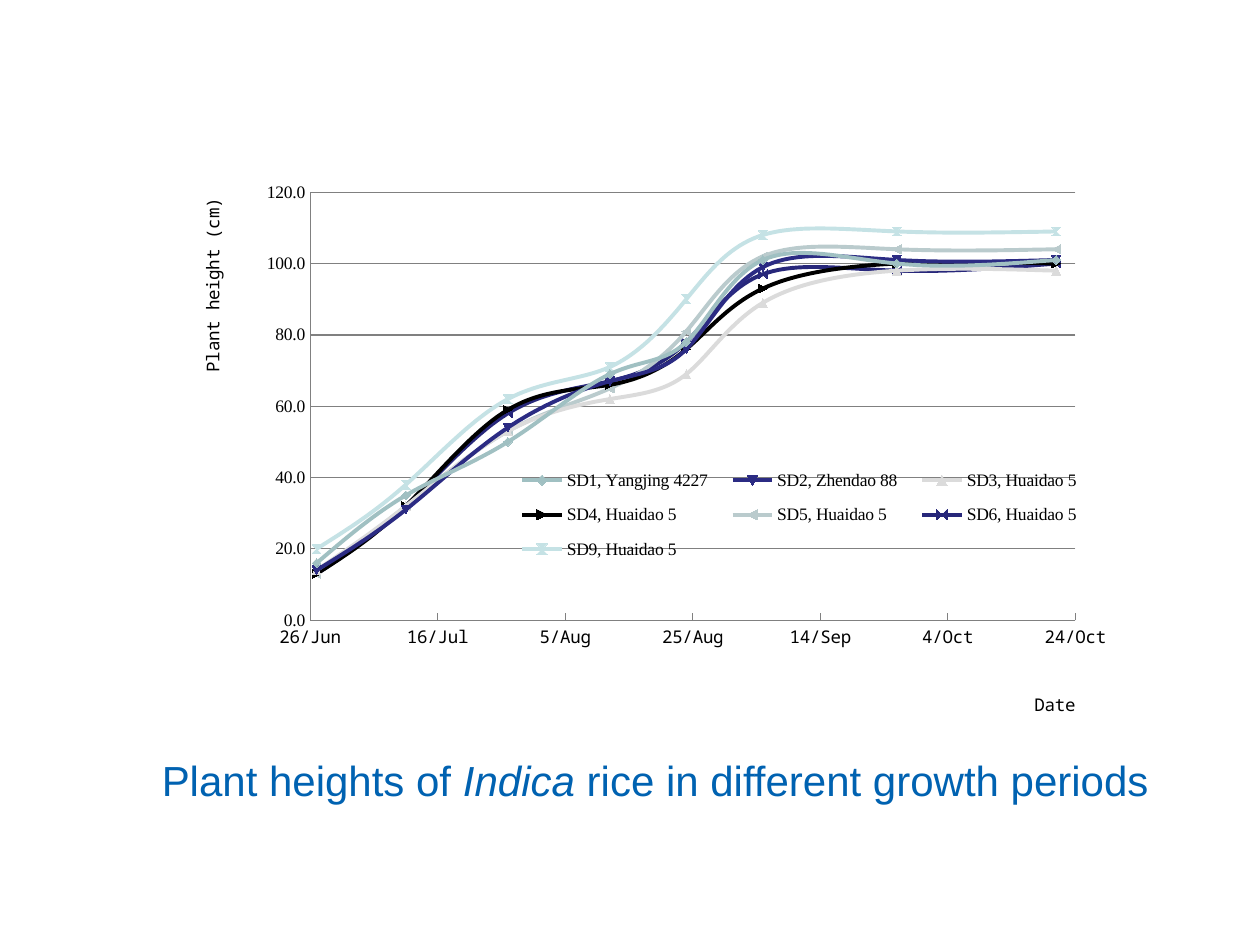
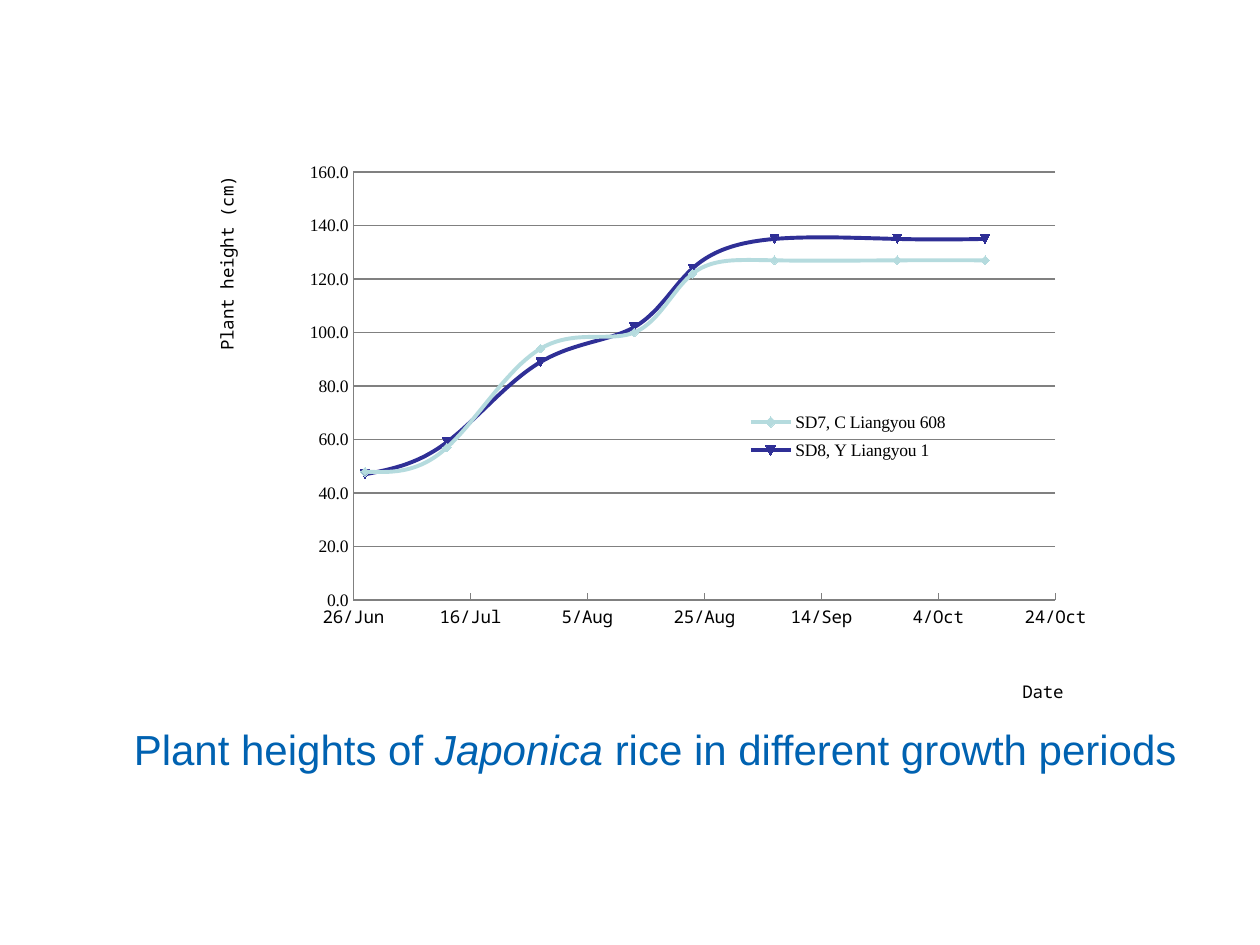
from lxml.etree import SubElement
from pptx import Presentation
from pptx.chart.data import XyChartData
from pptx.dml.color import RGBColor
from pptx.enum.chart import XL_CHART_TYPE as ChartType
from pptx.enum.chart import XL_LEGEND_POSITION as LegendPosition
from pptx.enum.chart import XL_TICK_MARK as TickMark
from pptx.enum.text import MSO_ANCHOR, PP_ALIGN
from pptx.oxml.ns import qn
from pptx.util import Inches, Pt

TITLE_BLUE, BLACK, GRID_GRAY = "0062B1", "000000", "808080"
SANS, SERIF, MONO = "Arial", "Times New Roman", "Noto Sans Mono"
FIRST_DAY, LAST_DAY = 40720, 40840  # 26 June and 24 October as date serials

# Boxes are left, top, width, height; those inside a chart are fractions of it.
SLIDES = [
    {
        "rice": "Indica",
        "title_box": (0.7, 5.78, 9, 0.81),
        "chart_box": (0.94, 1.25, 7.97, 4.68),
        "plot_box": (0.191, 0.059, 0.762, 0.726),
        "legend_box": (0.383, 0.506, 0.59, 0.2),
        "date_place": (0.909, 0.9),
        "height_place": (0.077, 0.064),
        "highest": 120,
        "days": (1, 15, 31, 47, 59, 71, 92, 117),
        "series": [
            ("SD1, Yangjing 4227", "A0C0C2", (16, 35, 50, 69, 78, 101, 100, 101)),
            ("SD2, Zhendao 88", "2B2B83", (14, 31, 54, 67, 76, 99, 101, 101)),
            ("SD3, Huaidao 5", "DBDBDB", (14, 32, 53, 62, 69, 89, 98, 98)),
            ("SD4, Huaidao 5", "000000", (13, 32, 59, 66, 76, 93, 100, 100)),
            ("SD5, Huaidao 5", "BACBCD", (13, 32, 53, 65, 81, 102, 104, 104)),
            ("SD6, Huaidao 5", "27277A", (13, 32, 58, 67, 78, 97, 98, 100)),
            ("SD9, Huaidao 5", "C5E2E5", (20, 38, 62, 71, 90, 108, 109, 109)),
        ],
    },
    {
        "rice": "Japonica",
        "title_box": (0.7, 5.39, 9, 1.1),
        "chart_box": (1.41, 1.09, 7.34, 4.68),
        "plot_box": (0.19, 0.059, 0.759, 0.726),
        "legend_box": (0.6, 0.452, 0.25, 0.11),
        "date_place": (0.91, 0.912),
        "height_place": (0.035, 0.061),
        "highest": 160,
        "days": (2, 16, 32, 48, 58, 72, 93, 108),
        "series": [
            ("SD7, C Liangyou 608", "B5DBDE", (48, 57, 94, 100, 122, 127, 127, 127)),
            ("SD8, Y Liangyou 1", "2F2F96", (47, 59, 89, 102, 124, 135, 135, 135)),
        ],
    },
]


def color(hex_value):
    return RGBColor.from_string(hex_value)


def set_font(font, name, size, hex_value=BLACK, **flags):
    values = {"name": name, "size": Pt(size), "bold": False, **flags}
    for attribute, value in values.items():
        setattr(font, attribute, value)
    font.color.rgb = color(hex_value)


def set_line(line, hex_value, width):
    line.color.rgb = color(hex_value)
    line.width = Pt(width)


def place_in_chart(element, position, box, inner=False):
    """Give a chart part a manual layout, inserted as its child number position."""
    for old_layout in element.findall(qn("c:layout")):
        element.remove(old_layout)
    layout = SubElement(element, qn("c:layout"))
    element.insert(position, layout)
    manual = SubElement(layout, qn("c:manualLayout"))
    settings = [("layoutTarget", "inner")] if inner else []
    settings += [("xMode", "edge"), ("yMode", "edge")]
    settings += zip("xywh", box)
    for tag, value in settings:
        SubElement(manual, qn(f"c:{tag}")).set("val", str(value))


def add_title(slide, content):
    title = slide.shapes.title
    title.left, title.top, title.width, title.height = map(Inches, content["title_box"])
    frame = title.text_frame
    frame.word_wrap = True
    frame.vertical_anchor = MSO_ANCHOR.MIDDLE
    paragraph = frame.paragraphs[0]
    paragraph.alignment = PP_ALIGN.CENTER
    pieces = [
        ("Plant heights of ", False),
        (content["rice"] + " ", True),
        ("rice in different growth periods", False),
    ]
    for text, italic in pieces:
        run = paragraph.add_run()
        run.text = text
        set_font(run.font, SANS, 24, TITLE_BLUE, italic=italic)


def format_axis(axis, title, place, limits, number_format, label_font):
    values = {
        "minimum_scale": limits[0],
        "maximum_scale": limits[1],
        "major_unit": 20,
        "major_tick_mark": TickMark.INSIDE,
        "minor_tick_mark": TickMark.NONE,
    }
    for attribute, value in values.items():
        setattr(axis, attribute, value)
    labels = axis.tick_labels
    labels.number_format = number_format
    labels.number_format_is_linked = False
    set_font(labels.font, label_font, 10)
    set_line(axis.format.line, GRID_GRAY, 0.75)
    frame = axis.axis_title.text_frame
    frame.text = title
    set_font(frame.paragraphs[0].runs[0].font, MONO, 10)
    place_in_chart(axis.axis_title._element, 1, place)


def add_growth_chart(slide, content):
    data = XyChartData(number_format="0.0")
    for name, _, heights in content["series"]:
        series = data.add_series(name)
        for day, height in zip(content["days"], heights):
            series.add_data_point(FIRST_DAY + day, height)
    chart = slide.shapes.add_chart(
        ChartType.XY_SCATTER_SMOOTH, *map(Inches, content["chart_box"]), data
    ).chart
    chart.has_title = False
    set_font(chart.font, SANS, 10)

    dates, heights = chart.category_axis, chart.value_axis
    format_axis(dates, "Date", content["date_place"],
                (FIRST_DAY, LAST_DAY), "d/mmm", MONO)
    format_axis(heights, "Plant height (cm)", content["height_place"],
                (0, content["highest"]), "0.0", SERIF)
    dates.has_major_gridlines = False
    heights.has_major_gridlines = True
    set_line(heights.major_gridlines.format.line, GRID_GRAY, 0.75)

    plot = chart.plots[0]
    plot.vary_by_categories = False
    place_in_chart(plot._element.getparent(), 0, content["plot_box"], inner=True)
    for series, (_, hex_value, _) in zip(plot.series, content["series"]):
        set_line(series.format.line, hex_value, 2.25)
        marker = series.marker.format
        marker.fill.solid()
        marker.fill.fore_color.rgb = color(hex_value)
        set_line(marker.line, hex_value, 0.75)
        series._element.find(qn("c:smooth")).set("val", "1")

    chart.has_legend = True
    legend = chart.legend
    legend.position = LegendPosition.RIGHT
    legend.include_in_layout = False
    set_font(legend.font, SERIF, 10)
    place_in_chart(legend._element, 1, content["legend_box"])


def main():
    presentation = Presentation()
    presentation.slide_width, presentation.slide_height = Inches(10), Inches(7.5)
    title_only = presentation.slide_layouts[5]
    for content in SLIDES:
        slide = presentation.slides.add_slide(title_only)
        add_title(slide, content)
        add_growth_chart(slide, content)
    presentation.save("out.pptx")


if __name__ == "__main__":
    main()
